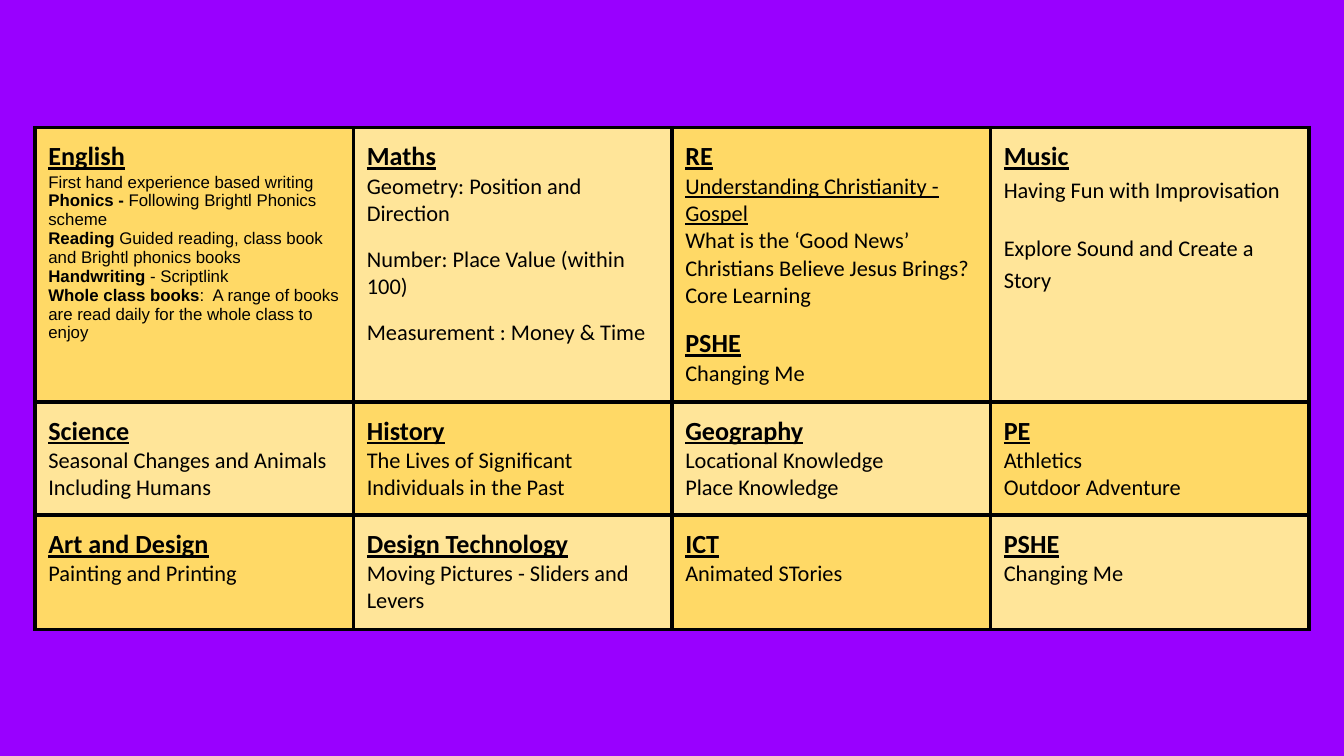
from dataclasses import dataclass

import lxml.etree
import pptx
import pptx.dml.color
import pptx.oxml.ns
import pptx.util
from pptx.util import Inches


@dataclass
class Line:
    """One paragraph, given as (text, bold) runs."""
    runs: list
    size: float = 12
    font: str = "Calibri"
    underline: bool = False
    space_before: float = 0
    spacing: float = 1.0


def heading(text, space_before=0):
    return Line([(text, True)], size=14, underline=True, space_before=space_before)


def body(text, **options):
    return Line([(text, False)], **options)


def detail(*runs):
    return Line(list(runs), size=9, font="Arial")


def subject(title, *texts):
    return [heading(title), *(body(text) for text in texts)]


def color(value):
    return pptx.dml.color.RGBColor.from_string(value)


class SlideBuilder:
    INK = "000000"
    FILLS = ("FFD966", "FFE599")
    BORDER_WIDTH = pptx.util.Pt(2.25)
    MARGIN = Inches(0.1)

    def __init__(self, slide):
        self.slide = slide

    def background(self, value):
        fill = self.slide.background.fill
        fill.solid()
        fill.fore_color.rgb = color(value)

    def table(self, left, top, column_width, row_heights, content):
        columns = len(content[0])
        table = self.slide.shapes.add_table(
            len(content), columns, Inches(left), Inches(top),
            Inches(column_width * columns), Inches(sum(row_heights))).table
        table.first_row = False
        table.horz_banding = False
        for column in table.columns:
            column.width = Inches(column_width)
        for row_index, row in enumerate(content):
            table.rows[row_index].height = Inches(row_heights[row_index])
            for column_index, lines in enumerate(row):
                fill = self.FILLS[(row_index + column_index) % 2]
                self.cell(table.cell(row_index, column_index), lines, fill)

    def cell(self, cell, lines, fill):
        cell.margin_left = cell.margin_right = self.MARGIN
        cell.margin_top = cell.margin_bottom = self.MARGIN
        self.borders(cell)
        cell.fill.solid()
        cell.fill.fore_color.rgb = color(fill)
        for index, line in enumerate(lines):
            frame = cell.text_frame
            paragraph = frame.add_paragraph() if index else frame.paragraphs[0]
            self.paragraph(paragraph, line)

    def borders(self, cell):
        properties = cell._tc.get_or_add_tcPr()
        qn = pptx.oxml.ns.qn
        for side in ("a:lnL", "a:lnR", "a:lnT", "a:lnB"):
            border = lxml.etree.SubElement(
                properties, qn(side), w=str(self.BORDER_WIDTH))
            solid = lxml.etree.SubElement(border, qn("a:solidFill"))
            lxml.etree.SubElement(solid, qn("a:srgbClr"), val=self.INK)

    def paragraph(self, paragraph, line):
        paragraph.space_before = pptx.util.Pt(line.space_before)
        paragraph.line_spacing = line.spacing
        for text, bold in line.runs:
            run = paragraph.add_run()
            run.text = text
            run.font.name = line.font
            run.font.size = pptx.util.Pt(line.size)
            run.font.bold = bold
            run.font.underline = line.underline
            run.font.color.rgb = color(self.INK)


CURRICULUM = [
    [
        [
            heading("English"),
            detail(("First hand experience based writing ", False),
                   ("Phonics -", True),
                   (" Following Brightl Phonics scheme", False)),
            detail(("Reading ", True),
                   ("Guided reading, class book and Brightl phonics books", False)),
            detail(("Handwriting", True), (" - Scriptlink", False)),
            detail(("Whole class books", True),
                   (":  A range of books are read daily for the whole class to enjoy",
                    False)),
        ],
        [
            heading("Maths"),
            body("Geometry: Position and Direction"),
            body("Number: Place Value (within 100)", space_before=10),
            body("Measurement : Money & Time", space_before=10),
        ],
        [
            heading("RE"),
            body("Understanding Christianity - Gospel", underline=True),
            body("What is the ‘Good News’ Christians Believe Jesus Brings?"),
            body("Core Learning"),
            heading("PSHE", space_before=10),
            body("Changing Me"),
        ],
        [
            heading("Music"),
            body("Having Fun with Improvisation", spacing=1.15),
            body("Explore Sound and Create a Story", spacing=1.15, space_before=14.5),
        ],
    ],
    [
        subject("Science", "Seasonal Changes and Animals Including Humans"),
        subject("History", "The Lives of Significant Individuals in the Past"),
        subject("Geography", "Locational Knowledge", "Place Knowledge"),
        subject("PE", "Athletics", "Outdoor Adventure"),
    ],
    [
        subject("Art and Design", "Painting and Printing"),
        subject("Design Technology", "Moving Pictures - Sliders and Levers"),
        subject("ICT", "Animated STories"),
        subject("PSHE", "Changing Me"),
    ],
]


def main():
    presentation = pptx.Presentation()
    presentation.slide_width = Inches(10)
    presentation.slide_height = Inches(10 * 9 / 16)
    blank_layout = presentation.slide_layouts[6]
    builder = SlideBuilder(presentation.slides.add_slide(blank_layout))
    builder.background("9900FF")
    builder.table(0.26, 0.95, 2.37, (2.04, 0.84, 0.85), CURRICULUM)
    presentation.save("out.pptx")


if __name__ == "__main__":
    main()
